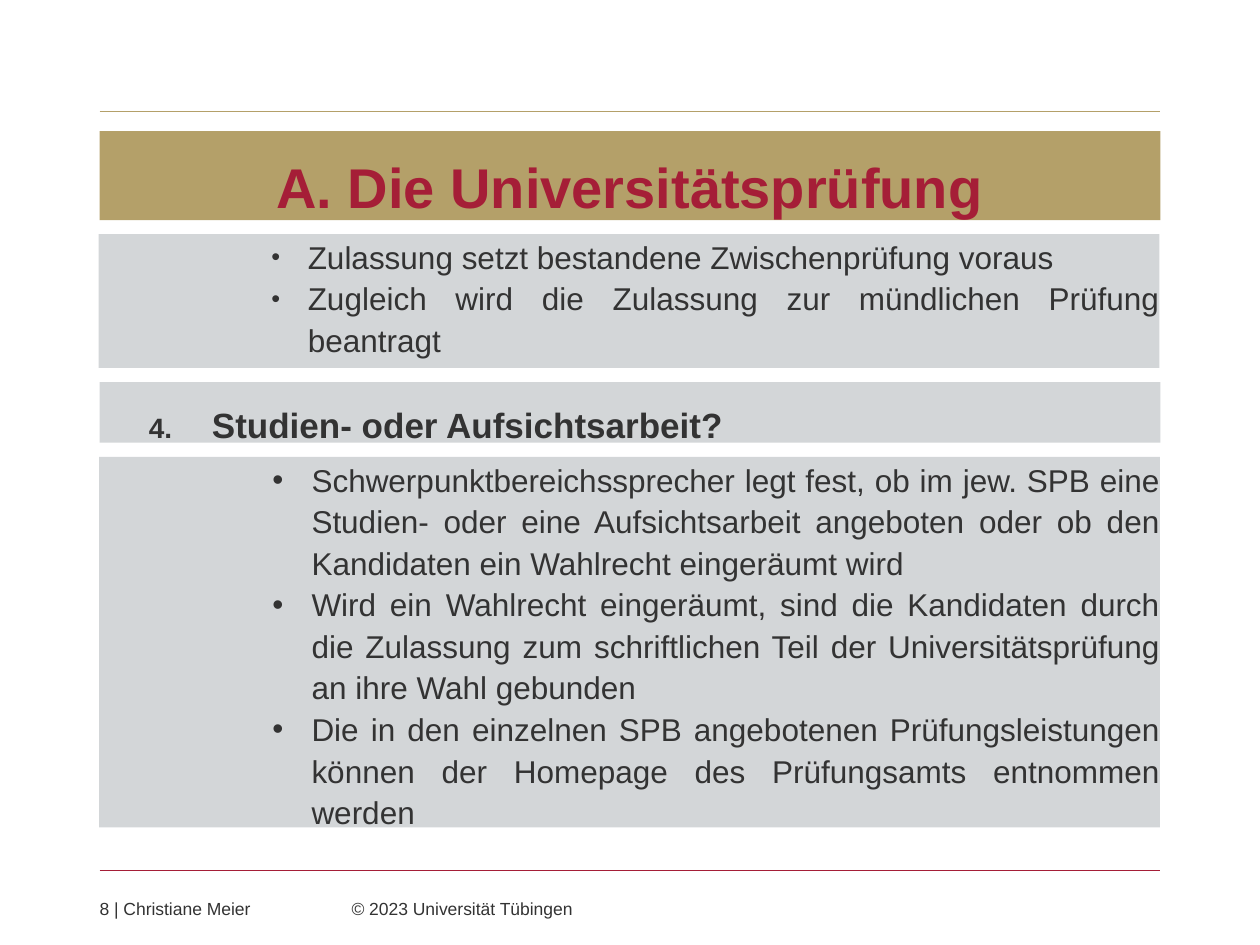
import pptx
import pptx.util
import pptx.oxml
import pptx.dml.color
import pptx.enum.shapes
import pptx.enum.text
import lxml.etree

Pt = pptx.util.Pt
RGB = pptx.dml.color.RGBColor.from_string
ALIGN = pptx.enum.text.PP_ALIGN
ANCHOR = pptx.enum.text.MSO_ANCHOR
NS = "http://schemas.openxmlformats.org/drawingml/2006/main"

COLORS = {"gold": "B4A069", "red": "A51E37", "gray": "D3D6D8", "text": "333333"}
LEFT, WIDTH = 56.9, 606.2


def add_tag(parent, tag, **attrs):
    node = lxml.etree.SubElement(parent, f"{{{NS}}}{tag}")
    for key, value in attrs.items():
        node.set(key, str(value))
    return node


def fill_text(shape, lines, form, color="text", anchor=ANCHOR.TOP,
              align=ALIGN.LEFT, space=1, level=0, indent=None, marks=(), tab=None):
    frame = shape.text_frame
    frame.word_wrap = True
    frame.vertical_anchor = anchor
    for side in ("left", "top", "right", "bottom"):
        setattr(frame, f"margin_{side}", 0)
    for i, line in enumerate(lines):
        para = frame.paragraphs[0] if i == 0 else frame.add_paragraph()
        para.alignment, para.line_spacing, para.level = align, space, level
        props = para._p.get_or_add_pPr()
        if indent:
            props.set("marL", str(Pt(indent[0])))
            props.set("indent", str(Pt(indent[1])))
        for tag, attrs in marks:
            add_tag(props, tag, **attrs)
        if tab:
            add_tag(add_tag(props, "tabLst"), "tab", pos=Pt(tab), algn="l")
        run = para.add_run()
        run.text = line
        run.font.name = "Arial"
        run.font.color.rgb = RGB(COLORS[color])
        for key, value in form.items():
            setattr(run.font, key, value)


deck = pptx.Presentation()
deck.slide_width, deck.slide_height = Pt(720), Pt(540)
slide = deck.slides.add_slide(deck.slide_layouts[6])
shapes = slide.shapes

# Rules above and below the content
for top, color in ((63.8, "gold"), (497.3, "red")):
    rule = shapes.add_connector(pptx.enum.shapes.MSO_CONNECTOR.STRAIGHT,
                                Pt(LEFT), Pt(top), Pt(LEFT + WIDTH), Pt(top))
    rule.line.color.rgb = RGB(COLORS[color])
    rule.line.width = Pt(0.75)
    add_tag(rule._element.spPr, "effectLst")

# Bars: left, top, height, fill, text, format
dot = ("buChar", {"char": "•"})
face = ("buFont", {"typeface": "Arial"})
small = ("buSzPct", {"val": 80000})
count = ("buAutoNum", {"type": "arabicPeriod", "startAt": 4})
points = {"form": {"size": Pt(18)}, "align": ALIGN.JUSTIFY, "space": 1.1}
bars = [
    (LEFT, 74.9, 50.9, "gold", ["A. Die Universitätsprüfung"],
     {"form": {"size": Pt(32), "bold": True}, "color": "red",
      "anchor": ANCHOR.BOTTOM, "align": ALIGN.CENTER, "space": 1.5}),
    (56.3, 133.8, 76.4, "gray",
     ["Zulassung setzt bestandene Zwischenprüfung voraus",
      "Zugleich wird die Zulassung zur mündlichen Prüfung beantragt"],
     {**points, "level": 1, "indent": (119.6, -20.8), "marks": (small, face, dot)}),
    (LEFT, 218.3, 34.6, "gray", ["Studien- oder Aufsichtsarbeit?"],
     {"form": {"size": Pt(20), "bold": True}, "space": 1.5, "level": 1,
      "indent": (64.2, -36), "marks": (small, face, count), "tab": 35.4}),
    (56.6, 261.1, 211.7, "gray",
     ["Schwerpunktbereichssprecher legt fest, ob im jew. SPB eine Studien- oder "
      "eine Aufsichtsarbeit angeboten oder ob den Kandidaten ein Wahlrecht "
      "eingeräumt wird",
      "Wird ein Wahlrecht eingeräumt, sind die Kandidaten durch die Zulassung zum "
      "schriftlichen Teil der Universitätsprüfung an ihre Wahl gebunden",
      "Die in den einzelnen SPB angebotenen Prüfungsleistungen können der Homepage "
      "des Prüfungsamts entnommen werden"],
     {**points, "level": 2, "indent": (121.4, -22.3), "marks": (face, dot)}),
]
for left, top, height, color, lines, style in bars:
    bar = shapes.add_shape(pptx.enum.shapes.MSO_SHAPE.RECTANGLE,
                           Pt(left), Pt(top), Pt(WIDTH), Pt(height))
    bar.shadow.inherit = False
    bar.fill.solid()
    bar.fill.fore_color.rgb = RGB(COLORS[color])
    bar.line.fill.background()
    fill_text(bar, lines, **style)

# Footer
foot = shapes.add_textbox(Pt(LEFT), Pt(513.4), Pt(WIDTH), Pt(12.2))
fill_text(foot, ["8 | Christiane Meier\t© 2023 Universität Tübingen"],
          {"size": Pt(10)}, tab=144)

deck.save("out.pptx")
